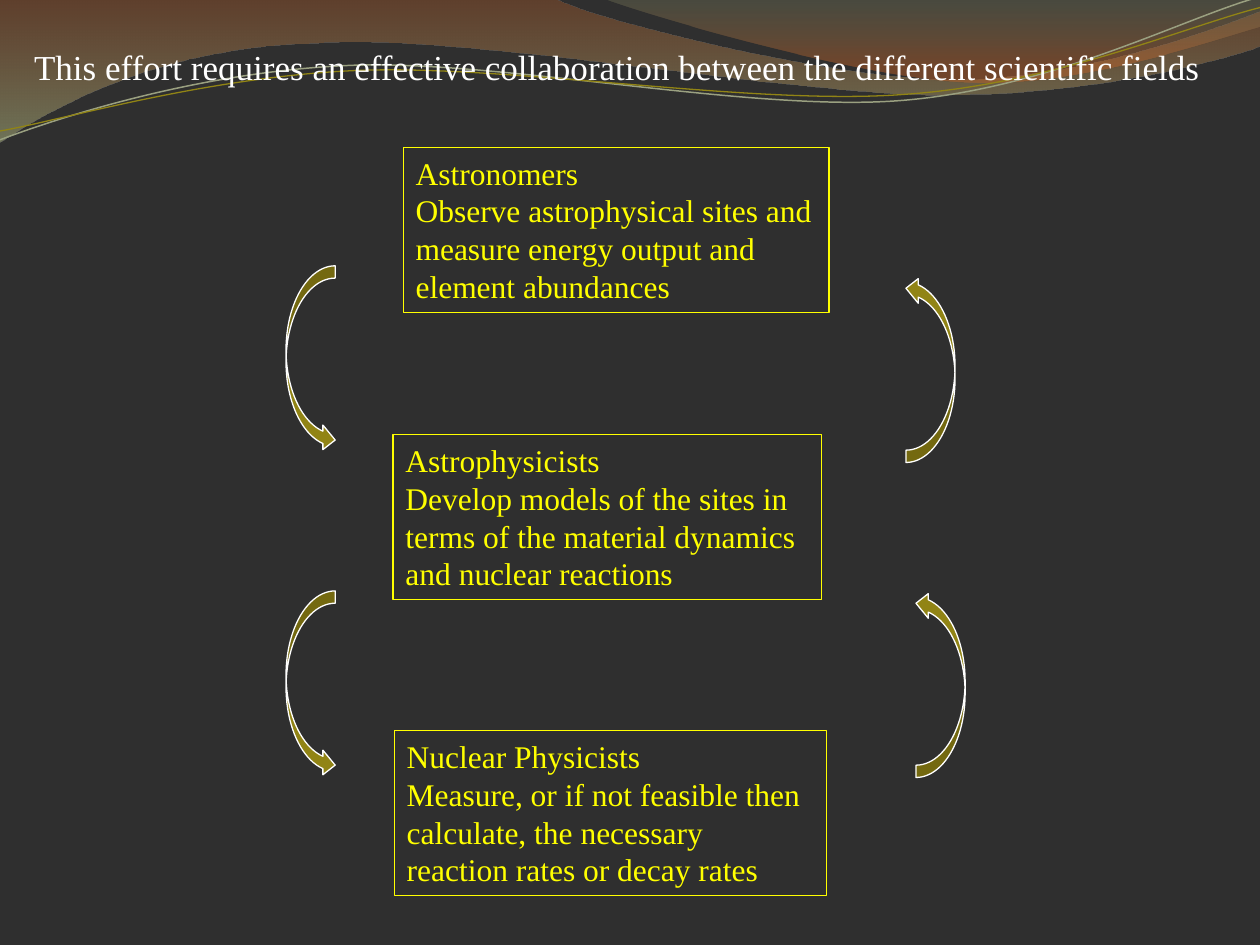
from lxml import etree
from pptx import Presentation
from pptx.dml.color import RGBColor
from pptx.enum.shapes import MSO_SHAPE
from pptx.enum.text import MSO_ANCHOR, MSO_AUTO_SIZE, PP_ALIGN
from pptx.oxml.ns import qn
from pptx.util import Inches, Pt

COLORS = {
    "background": "2F2F2F", "white": "FFFFFF", "yellow": "FFFF00",
    "olive": "918415", "sage": "9AA080", "rust": "9A542A",
    "moss": "A5AD7B", "gray_green": "848A67", "orange": "C36228",
}
FONT = "Times New Roman"
TITLE = ("This effort requires an effective collaboration between "
         "the different scientific fields")

# (left, top, width), lines
BOXES = [
    ((3.2, 1.17, 3.38), ["Astronomers", "Observe astrophysical sites and",
                         "measure energy output and", "element abundances"]),
    ((3.12, 3.45, 3.4), ["Astrophysicists", "Develop models of the sites in",
                         "terms of the material dynamics", "and nuclear reactions"]),
    ((3.13, 5.8, 3.43), ["Nuclear Physicists", "Measure, or if not feasible then",
                         "calculate, the necessary", "reaction rates or decay rates"]),
]
BOX_HEIGHT = 1.31

# left, top, rotation
ARROWS = [(2.27, 2.11, 0), (2.27, 4.69, 0), (7.19, 2.19, 180), (7.27, 4.69, 180)]
ARROW_SIZE = (0.39, 1.48)

# Outlines: two numbers are a straight step, six are a Bezier step
# Gradient stops: position, colour, opacity in percent
BANDS = [
    ([(0, 0), (4.4, -0.01), (4.76, 0.17, 6.64, 0.63, 7.58, 0.63),
      (8.53, 0.63, 9.58, 0.26, 10, 0.09), (10.01, 0.36),
      (9.83, 0.44, 8.7, 0.76, 7.46, 0.75), (6.22, 0.75, 3.82, 0.28, 2.57, 0.34),
      (1.29, 0.36, 0.46, 0.83, -0.01, 1.13), (0, 0)],
     [(0, "rust", 45), (1, "moss", 55)]),
    ([(4.79, -0.01), (5.09, 0.11, 6.82, 0.62, 7.69, 0.65),
      (8.56, 0.69, 9.61, 0.32, 10, 0.21), (10, 0), (4.79, -0.01)],
     [(0, "gray_green", 30), (0.8, "orange", 45)]),
]
WAVES = [
    ([(0, 1.11), (0.48, 0.93, 1.58, 0.57, 2.77, 0.52),
      (3.95, 0.47, 5.93, 0.89, 7.13, 0.8), (8.33, 0.71, 9.38, 0.15, 9.98, -0.02)],
     "sage", 0.85),
    ([(0, 1.04), (0.47, 0.96, 1.64, 0.61, 2.83, 0.56),
      (4.03, 0.51, 5.97, 0.84, 7.17, 0.75), (8.36, 0.67, 9.41, 0.21, 10, 0.06)],
     "olive", 0.75),
]


def rgb(name):
    return RGBColor.from_string(COLORS[name])


def add_outline(s, outline, close):
    """Join the end points with lines, then bend the Bezier steps."""
    ends = [(Inches(step[-2]), Inches(step[-1])) for step in outline]
    builder = s.shapes.build_freeform(*ends[0])
    builder.add_line_segments(ends[1:], close=close)
    sp = builder.convert_to_shape()
    sp.shadow.inherit = False
    lines = list(sp._element.spPr.iter(qn("a:lnTo")))
    for line, step in zip(lines, outline[1:]):
        if len(step) == 2:
            continue
        curve = etree.Element(qn("a:cubicBezTo"))
        for x, y in zip(step[::2], step[1::2]):
            etree.SubElement(curve, qn("a:pt"), x=str(Inches(x) - sp.left),
                             y=str(Inches(y) - sp.top))
        line.getparent().replace(line, curve)
    return sp


def add_band(s, outline, stops):
    sp = add_outline(s, outline, True)
    sp.line.fill.background()
    sp.fill.gradient()
    sp.fill.gradient_angle = 270
    for stop, (position, color, _) in zip(sp.fill.gradient_stops, stops):
        stop.position = position
        stop.color.rgb = rgb(color)
    fills = list(sp._element.spPr.iter(qn("a:srgbClr")))
    for clr, (_, _, opacity) in zip(fills, stops):
        etree.SubElement(clr, qn("a:alpha"), val=str(opacity * 1000))


def set_line(sp, color, width):
    sp.line.color.rgb = rgb(color)
    sp.line.width = Pt(width)


def write(tf, lines, size, color):
    tf.word_wrap = False
    tf.auto_size = MSO_AUTO_SIZE.SHAPE_TO_FIT_TEXT
    tf.vertical_anchor = MSO_ANCHOR.TOP
    for i, line in enumerate(lines):
        p = tf.add_paragraph() if i else tf.paragraphs[0]
        p.alignment = PP_ALIGN.LEFT
        r = p.add_run()
        r.text = line
        r.font.name = FONT
        r.font.size = Pt(size)
        r.font.color.rgb = rgb(color)


def main():
    prs = Presentation()
    prs.slide_width, prs.slide_height = Inches(10), Inches(7.5)
    s = prs.slides.add_slide(prs.slide_layouts[5])
    s.background.fill.solid()
    s.background.fill.fore_color.rgb = rgb("background")

    for outline, stops in BANDS:
        add_band(s, outline, stops)
    for outline, color, width in WAVES:
        sp = add_outline(s, outline, False)
        sp.fill.background()
        set_line(sp, color, width)

    for place, lines in BOXES:
        sp = s.shapes.add_shape(MSO_SHAPE.RECTANGLE,
                                *map(Inches, (*place, BOX_HEIGHT)))
        sp.shadow.inherit = False
        sp.fill.background()
        set_line(sp, "yellow", 0.75)
        write(sp.text_frame, lines, 18, "yellow")

    for left, top, rotation in ARROWS:
        sp = s.shapes.add_shape(MSO_SHAPE.CURVED_RIGHT_ARROW,
                                *map(Inches, (left, top, *ARROW_SIZE)))
        sp.shadow.inherit = False
        sp.rotation = rotation
        for i, value in enumerate((0.25, 0.5, 0.25)):
            sp.adjustments[i] = value
        sp.fill.solid()
        sp.fill.fore_color.rgb = rgb("olive")
        set_line(sp, "white", 0.75)

    title = s.shapes.title
    title.left, title.top, title.width, title.height = map(
        Inches, (0.17, 0.31, 9.53, 0.44))
    write(title.text_frame, [TITLE], 20, "white")
    s.shapes._spTree.append(title._element)  # in front of the waves

    prs.save("out.pptx")


if __name__ == "__main__":
    main()
